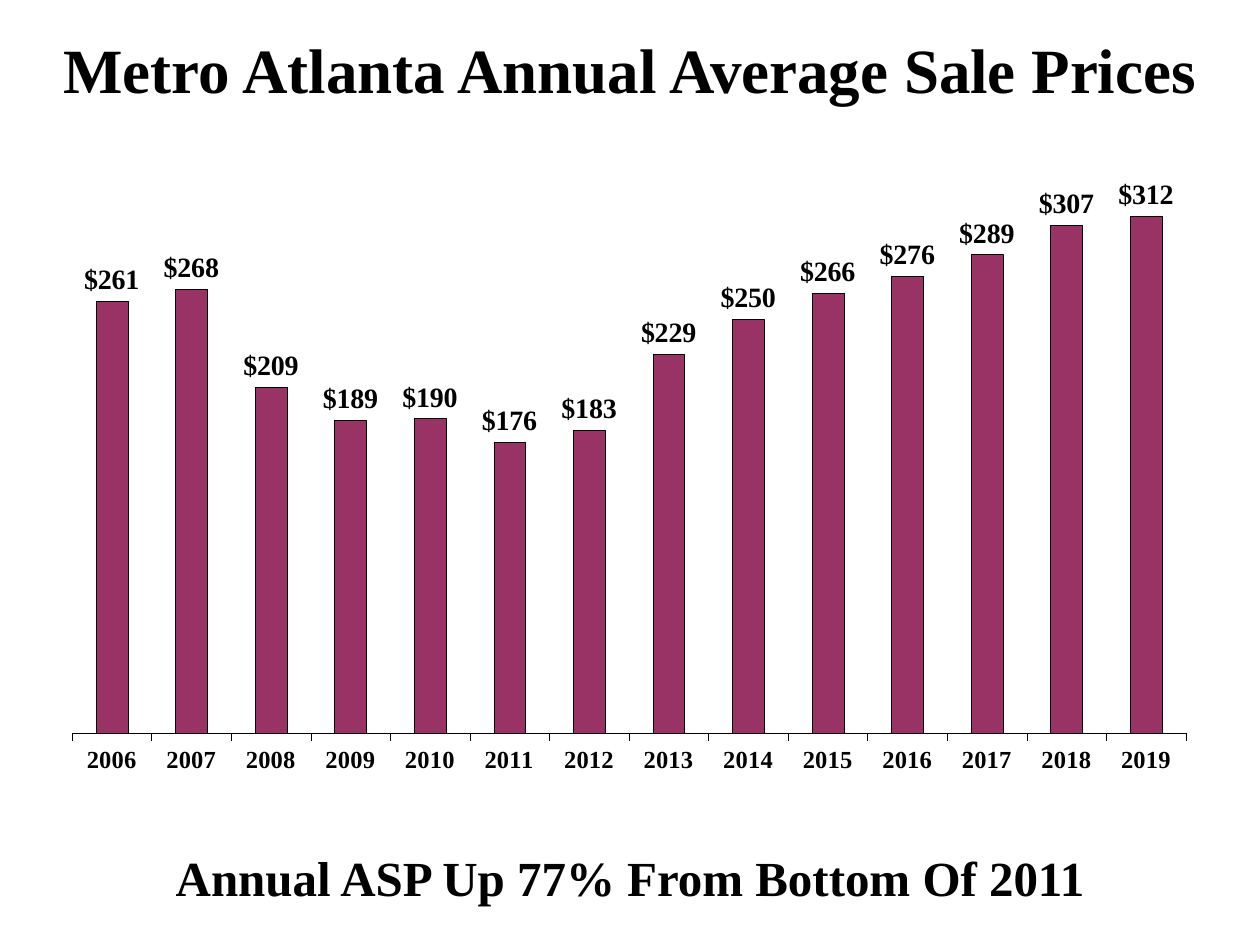
from lxml.etree import SubElement
from pptx import Presentation
from pptx.chart.data import CategoryChartData
from pptx.dml.color import RGBColor
from pptx.enum.chart import (
    XL_CHART_TYPE as ChartType,
    XL_LABEL_POSITION as LabelPos,
    XL_TICK_LABEL_POSITION as TickLabelPos,
    XL_TICK_MARK as TickMark,
)
from pptx.enum.text import MSO_ANCHOR as Anchor, PP_ALIGN as Align
from pptx.oxml.ns import qn
from pptx.util import Inches, Pt

COLORS = {"ink": "000000", "bar": "993366", "paper": "FFFFFF"}
FACE = "Times New Roman"
SLIDE_W, SLIDE_H = Inches(10), Inches(7.5)

TITLE_BOX = (0, 0.044, 1, 0.056)
CHART_BOX = (0.05, 0.095, 0.892, 0.775)
CAPTION_BOX = (0.025, 0.867, 0.95, 0.077)
PLOT = {"x": 0.008, "y": 0.087, "w": 0.991, "h": 0.792}

FIRST_YEAR = 2006
PRICES = [261, 268, 209, 189, 190, 176, 183, 229, 250, 266, 276, 289, 307, 312]


def place(box):
    left, top, width, height = box
    return (int(left * SLIDE_W), int(top * SLIDE_H),
            int(width * SLIDE_W), int(height * SLIDE_H))


def apply(target, values):
    for attribute, value in values.items():
        setattr(target, attribute, value)


def color(name):
    return RGBColor.from_string(COLORS[name])


def set_font(font, size):
    apply(font, {"name": FACE, "size": Pt(size), "bold": True})
    font.color.rgb = color("ink")


def set_line(line, width):
    line.color.rgb = color("ink")
    line.width = Pt(width)


def add_heading(slide, box, wording, size, frame_format, paragraph_format):
    frame = slide.shapes.add_textbox(*place(box)).text_frame
    apply(frame, {"word_wrap": True, **frame_format})
    heading = frame.paragraphs[0]
    apply(heading, {"alignment": Align.CENTER, **paragraph_format})
    run = heading.add_run()
    run.text = wording
    set_font(run.font, size)


def fix_plot_area(chart):
    plot_area = chart.plots[0]._element.getparent()
    for old in plot_area.findall(qn("c:layout")):
        plot_area.remove(old)
    layout = SubElement(plot_area, qn("c:layout"))
    plot_area.insert(0, layout)
    manual = SubElement(layout, qn("c:manualLayout"))
    settings = {"layoutTarget": "inner", "xMode": "edge", "yMode": "edge", **PLOT}
    for tag, value in settings.items():
        SubElement(manual, qn(f"c:{tag}")).set("val", str(value))


def add_price_chart(slide, box):
    price_data = CategoryChartData()
    price_data.categories = [str(FIRST_YEAR + i) for i in range(len(PRICES))]
    price_data.add_series("Series 1", PRICES)
    chart = slide.shapes.add_chart(
        ChartType.COLUMN_CLUSTERED, *place(box), price_data).chart
    apply(chart, {"has_legend": False, "has_title": False})
    set_font(chart.font, 14)
    fix_plot_area(chart)

    years = chart.category_axis
    apply(years, {
        "tick_label_position": TickLabelPos.LOW,
        "major_tick_mark": TickMark.OUTSIDE,
        "minor_tick_mark": TickMark.NONE,
        "has_major_gridlines": False,
    })
    set_font(years.tick_labels.font, 14)
    set_line(years.format.line, 0.02)

    apply(chart.value_axis, {
        "visible": False,
        "has_major_gridlines": False,
        "minimum_scale": 0,
        "maximum_scale": 350,
    })

    columns = chart.plots[0]
    apply(columns, {"gap_width": 150, "vary_by_categories": False})
    prices = columns.series[0]
    prices.format.fill.solid()
    prices.format.fill.fore_color.rgb = color("bar")
    set_line(prices.format.line, 0.06)
    labels = prices.data_labels
    apply(labels, {
        "show_value": True,
        "number_format": "\\$#,##0",
        "number_format_is_linked": False,
        "position": LabelPos.OUTSIDE_END,
    })
    set_font(labels.font, 16)


def main():
    deck = Presentation()
    apply(deck, {"slide_width": SLIDE_W, "slide_height": SLIDE_H})
    slide = deck.slides.add_slide(deck.slide_layouts[6])
    slide.background.fill.solid()
    slide.background.fill.fore_color.rgb = color("paper")

    add_heading(slide, CAPTION_BOX, "Annual ASP Up 77% From Bottom Of 2011", 28,
                {"vertical_anchor": Anchor.TOP, "margin_top": Inches(0.28),
                 "margin_bottom": 0},
                {"line_spacing": 0.9})
    add_price_chart(slide, CHART_BOX)
    add_heading(slide, TITLE_BOX, "Metro Atlanta Annual Average Sale Prices", 36,
                {"vertical_anchor": Anchor.MIDDLE}, {})
    deck.save("out.pptx")


if __name__ == "__main__":
    main()
